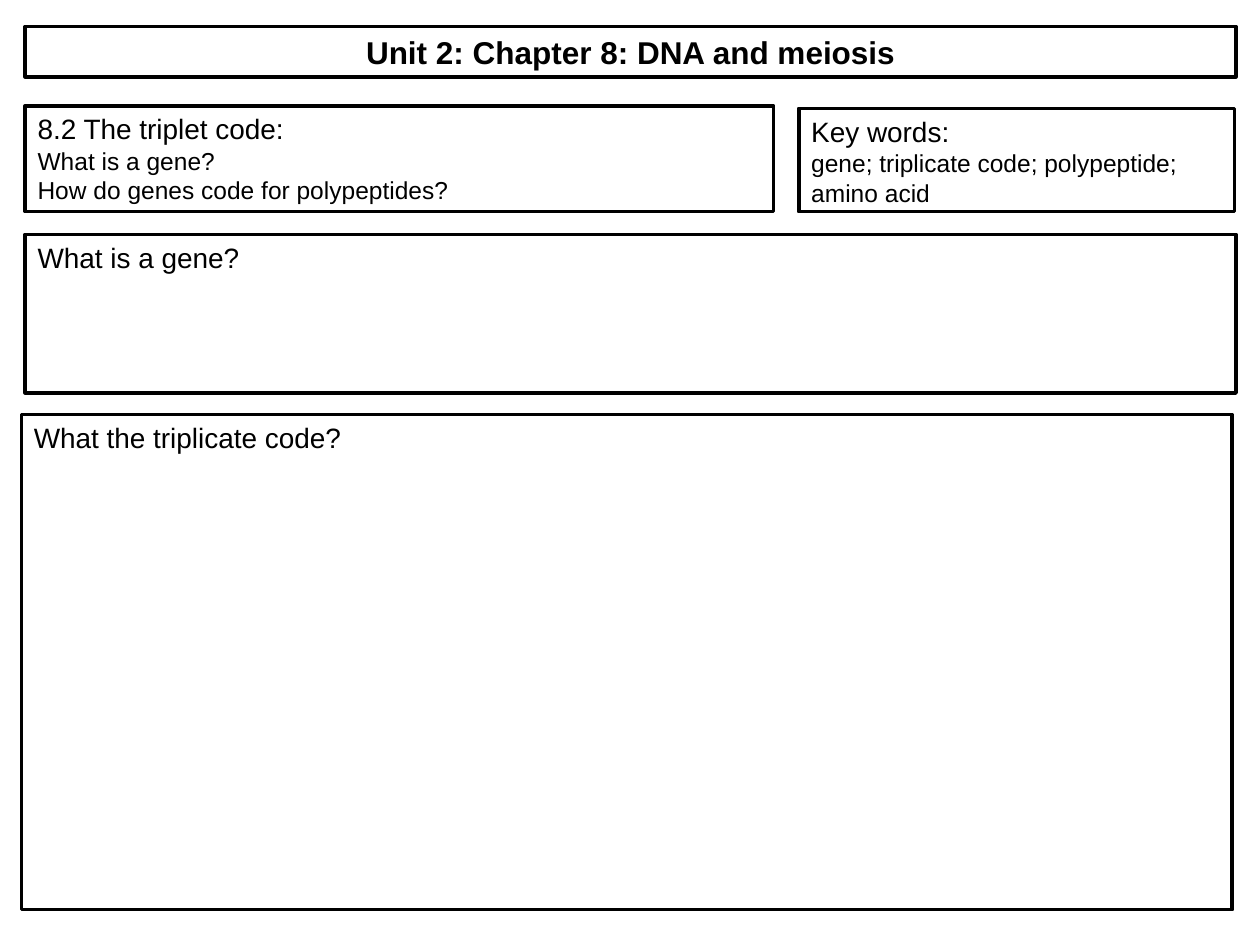
import pptx
import pptx.dml.color
import pptx.enum.shapes
import pptx.enum.text
import pptx.util

Inches = pptx.util.Inches
Align = pptx.enum.text.PP_ALIGN
BLACK = pptx.dml.color.RGBColor(0, 0, 0)
WHITE = pptx.dml.color.RGBColor(255, 255, 255)


def write(para, text, size=14, bold=False, align=Align.LEFT):
    para.alignment = align
    run = para.add_run()
    run.text = text
    font = run.font
    font.name = "Arial"
    font.size = pptx.util.Pt(size)
    font.bold = bold
    font.color.rgb = BLACK


def frame(slide, box):
    shape = slide.shapes.add_shape(
        pptx.enum.shapes.MSO_SHAPE.RECTANGLE, *map(Inches, box))
    shape.shadow.inherit = False
    shape.fill.solid()
    shape.fill.fore_color.rgb = WHITE
    shape.line.color.rgb = BLACK
    shape.line.width = pptx.util.Pt(2)
    body = shape.text_frame
    body.word_wrap = True
    body.vertical_anchor = pptx.enum.text.MSO_ANCHOR.TOP
    return body


def title(slide, box, text):
    body = frame(slide, box)
    write(body.paragraphs[0], text, size=18, bold=True, align=Align.CENTER)


def panel(slide, box, head, *lines):
    body = frame(slide, box)
    write(body.paragraphs[0], head, size=16)
    for line in lines:
        write(body.add_paragraph(), line)


def main():
    deck = pptx.Presentation()
    deck.slide_width = Inches(10)
    deck.slide_height = Inches(7.5)
    slide = deck.slides.add_slide(deck.slide_layouts[6])
    title(slide, (0.2, 0.21, 9.61, 0.4), "Unit 2: Chapter 8: DNA and meiosis")
    panel(slide, (0.2, 0.84, 5.94, 0.84), "8.2 The triplet code:",
          "What is a gene?", "How do genes code for polypeptides?")
    panel(slide, (6.34, 0.86, 3.46, 0.82), "Key words:",
          "gene; triplicate code; polypeptide; amino acid")
    panel(slide, (0.2, 1.86, 9.61, 1.26), "What is a gene?")
    panel(slide, (0.17, 3.29, 9.61, 3.93), "What the triplicate code?")
    deck.save("out.pptx")


if __name__ == "__main__":
    main()
